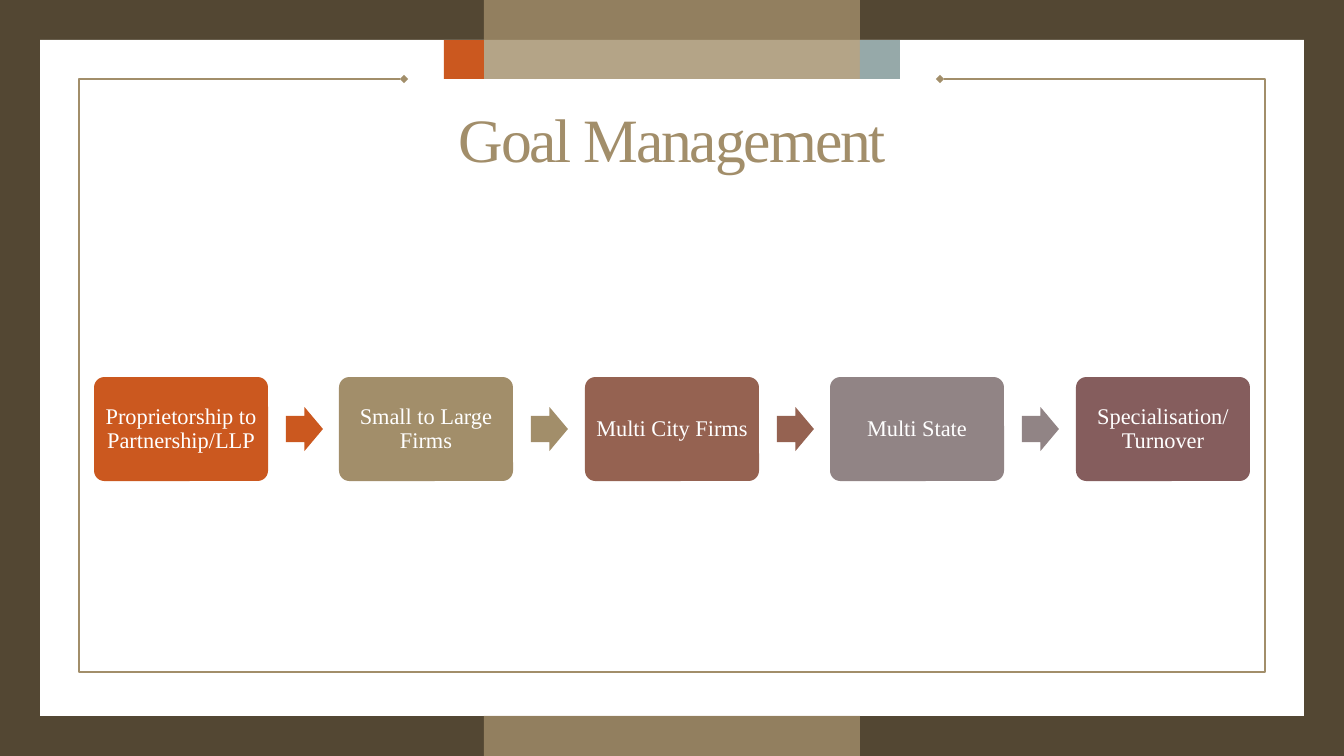
from pptx import Presentation
from pptx.dml.color import RGBColor
from pptx.enum.shapes import MSO_SHAPE
from pptx.enum.text import MSO_ANCHOR, MSO_AUTO_SIZE, PP_ALIGN
from pptx.oxml.ns import qn
from pptx.util import Pt
from lxml.etree import SubElement

EMU_PER_PX = 914400 / 100.8
FONT = "Times New Roman"
BROWN = RGBColor(0x53, 0x47, 0x33)
WHITE = RGBColor(0xFF, 0xFF, 0xFF)
TAN = RGBColor(0xA2, 0x8E, 0x6A)
ORANGE = RGBColor(0xCB, 0x58, 0x1F)
TEAL = RGBColor(0x96, 0xA9, 0xA9)
RUST = RGBColor(0x95, 0x62, 0x51)
GREY = RGBColor(0x91, 0x84, 0x85)
PLUM = RGBColor(0x85, 0x5D, 0x5D)

STAGES = [
    ("Proprietorship to Partnership/LLP", ORANGE),
    ("Small to Large Firms", TAN),
    ("Multi City Firms", RUST),
    ("Multi State", GREY),
    ("Specialisation/ Turnover", PLUM),
]
FIRST_LEFT, LAST_LEFT = 94, 1076


def emu(px):
    return round(px * EMU_PER_PX)


class SlideBuilder:
    """Draws styled elements on one slide, with lengths in px."""

    def __init__(self, presentation):
        self.slide = presentation.slides.add_slide(presentation.slide_layouts[5])
        self.shapes = self.slide.shapes
        background = self.slide.background.fill
        background.solid()
        background.fore_color.rgb = BROWN

    def block(self, left, top, width, height, color, kind=MSO_SHAPE.RECTANGLE,
              adjustments=(), opacity=None):
        shape = self.shapes.add_shape(kind, *map(emu, (left, top, width, height)))
        shape.shadow.inherit = False
        shape.line.fill.background()
        shape.fill.solid()
        shape.fill.fore_color.rgb = color
        for index, value in enumerate(adjustments):
            shape.adjustments[index] = value
        if opacity is not None:
            solid_color = shape.fill._xPr.find(qn("a:solidFill"))[0]
            SubElement(solid_color, qn("a:alpha"), val=str(opacity * 1000))
        return shape

    def text(self, shape, words, size, color):
        frame = shape.text_frame
        frame.text = words
        frame.word_wrap = True
        frame.auto_size = MSO_AUTO_SIZE.NONE
        frame.vertical_anchor = MSO_ANCHOR.MIDDLE
        paragraph = frame.paragraphs[0]
        paragraph.alignment = PP_ALIGN.CENTER
        paragraph.line_spacing = 0.9
        paragraph.font.name = FONT
        paragraph.font.size = Pt(size)
        paragraph.font.color.rgb = color
        return frame

    def title(self, words, left, top, width, height):
        title = self.shapes.title
        title.left, title.top, title.width, title.height = map(
            emu, (left, top, width, height))
        frame = self.text(title, words, 44, TAN)
        run = frame.paragraphs[0].runs[0]
        run.font._element.set("spc", "-150")
        self.shapes._spTree.append(title._element)

    def stage(self, left, words, color):
        box = self.block(left, 377, 174, 104, color,
                         MSO_SHAPE.ROUNDED_RECTANGLE, (0.1,))
        frame = self.text(box, words, 16, WHITE)
        frame.margin_left = frame.margin_right = emu(7)
        frame.margin_top = frame.margin_bottom = emu(7)

    def arrow(self, left, color):
        self.block(left, 407, 37, 44, color, MSO_SHAPE.RIGHT_ARROW, (0.6, 0.5))

    def open_frame(self, points):
        builder = self.shapes.build_freeform(*points[0], scale=EMU_PER_PX)
        builder.add_line_segments(points[1:], close=False)
        shape = builder.convert_to_shape()
        shape.shadow.inherit = False
        shape.fill.background()
        shape.line.color.rgb = TAN
        shape.line.width = Pt(1)
        line = shape.line._get_or_add_ln()
        for end in ("a:headEnd", "a:tailEnd"):
            SubElement(line, qn(end), type="diamond")


def main():
    presentation = Presentation()
    presentation.slide_width, presentation.slide_height = emu(1344), emu(756)
    builder = SlideBuilder(presentation)

    builder.block(40, 40, 1264, 676, WHITE)
    builder.open_frame([(940, 79), (1265, 79), (1265, 672),
                        (79, 672), (79, 79), (404, 79)])
    builder.block(484, 0, 376, 79, TAN, opacity=80)
    builder.block(444, 40, 40, 39, ORANGE)
    builder.block(860, 40, 40, 39, TEAL)
    builder.block(484, 716, 376, 40, TAN, opacity=80)
    builder.title("Goal Management", 93, 99, 1159, 88)

    last = len(STAGES) - 1
    for index, (words, color) in enumerate(STAGES):
        left = FIRST_LEFT + (LAST_LEFT - FIRST_LEFT) * index // last
        builder.stage(left, words, color)
        if index < last:
            builder.arrow(left + 192, color)

    presentation.save("out.pptx")


if __name__ == "__main__":
    main()
